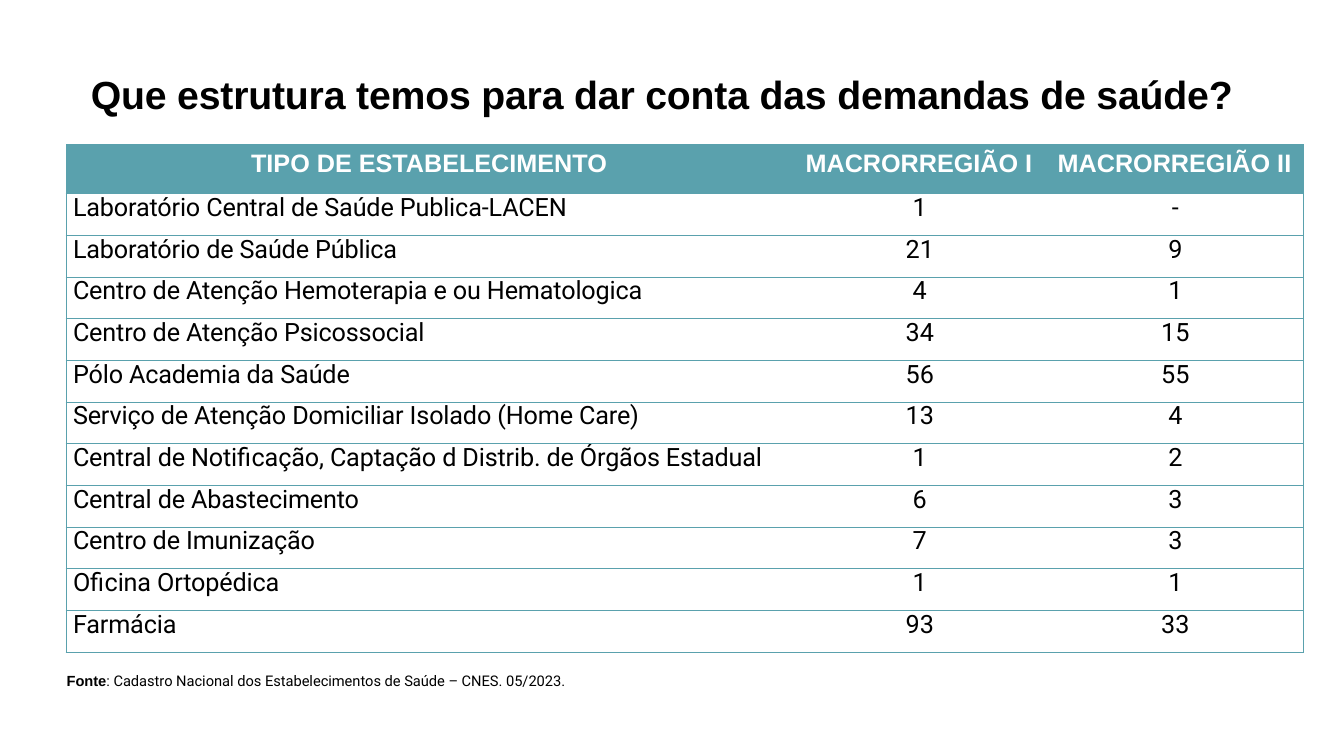
from lxml import etree
from pptx import Presentation
from pptx.dml.color import RGBColor
from pptx.enum.text import PP_ALIGN
from pptx.oxml.ns import qn
from pptx.util import Cm, Pt

LEFT, CENTER = PP_ALIGN.LEFT, PP_ALIGN.CENTER
COLORS = {"teal": "5AA1AD", "black": "000000", "white": "FFFFFF"}
COLUMN_WIDTHS = (18.31, 6.38, 6.5)
HEADER_HEIGHT, ROW_HEIGHT = 1.25, 1.05
HEADERS = ("TIPO DE ESTABELECIMENTO", "MACRORREGIÃO I", "MACRORREGIÃO II")
ESTABLISHMENTS = (
    ("Laboratório Central de Saúde Publica-LACEN", "1", "-"),
    ("Laboratório de Saúde Pública", "21", "9"),
    ("Centro de Atenção Hemoterapia e ou Hematologica", "4", "1"),
    ("Centro de Atenção Psicossocial", "34", "15"),
    ("Pólo Academia da Saúde", "56", "55"),
    ("Serviço de Atenção Domiciliar Isolado (Home Care)", "13", "4"),
    ("Central de Notificação, Captação d Distrib. de Órgãos Estadual", "1", "2"),
    ("Central de Abastecimento", "6", "3"),
    ("Centro de Imunização", "7", "3"),
    ("Oficina Ortopédica", "1", "1"),
    ("Farmácia", "93", "33"),
)


def style_font(font, name, size, color, bold=False):
    """Set the typeface, size, colour and weight of a font."""
    font.name, font.size, font.bold = name, Pt(size), bold
    font.color.rgb = RGBColor.from_string(COLORS[color])


def tighten(run):
    """Draw the letters of a run slightly closer together."""
    run._r.get_or_add_rPr().set("spc", "-10")


def add_text(slide, left, top, width, height, space_before):
    """Add a text box without side margins and return its paragraph."""
    frame = slide.shapes.add_textbox(Cm(left), Cm(top), Cm(width), Cm(height)).text_frame
    frame.word_wrap = True
    frame.margin_left = frame.margin_right = frame.margin_bottom = 0
    frame.margin_top = Cm(0.03)
    paragraph = frame.paragraphs[0]
    paragraph.space_before = Pt(space_before)
    return paragraph


def set_borders(cell, visible_sides):
    """Draw thin teal lines on the visible sides and none on the others."""
    properties = cell._tc.get_or_add_tcPr()
    for side in "LRTB":
        line = etree.SubElement(properties, qn(f"a:ln{side}"), w=str(Pt(0.5)))
        if side in visible_sides:
            fill = etree.SubElement(line, qn("a:solidFill"))
            etree.SubElement(fill, qn("a:srgbClr"), val=COLORS["teal"])
        else:
            etree.SubElement(line, qn("a:noFill"))


def fill_cell(cell, text, align, margin_left=0, margin_top=0):
    """Write text into a cell and return its paragraph."""
    cell.margin_left, cell.margin_top = Cm(margin_left), Cm(margin_top)
    cell.margin_right = cell.margin_bottom = 0
    paragraph = cell.text_frame.paragraphs[0]
    paragraph.text = text
    paragraph.alignment = align
    return paragraph


def fill_header(cell, text):
    """Write a column heading on teal."""
    paragraph = fill_cell(cell, text, CENTER, margin_top=0.13)
    paragraph.space_before = Pt(3.4)
    style_font(paragraph.font, "Arial", 18, "white", bold=True)
    set_borders(cell, "")
    cell.fill.solid()
    cell.fill.fore_color.rgb = RGBColor.from_string(COLORS["teal"])


def fill_body(cell, text, column):
    """Write a name or a count in a ruled body cell."""
    is_name = column == 0
    paragraph = fill_cell(cell, text, LEFT if is_name else CENTER, 0.18 if is_name else 0.04)
    paragraph.line_spacing = Pt(20.7)
    style_font(paragraph.font, "Roboto", 18, "black")
    if is_name:
        tighten(paragraph.runs[0])
    set_borders(cell, ("LTB", "TB", "RTB")[column])
    cell.fill.background()


def add_establishment_table(slide):
    """Add the table of establishments by macro-region."""
    height = HEADER_HEIGHT + ROW_HEIGHT * len(ESTABLISHMENTS)
    table = slide.shapes.add_table(
        len(ESTABLISHMENTS) + 1, len(HEADERS),
        Cm(1.66), Cm(3.63), Cm(sum(COLUMN_WIDTHS)), Cm(height),
    ).table
    table.horz_banding = False
    for column, width in enumerate(COLUMN_WIDTHS):
        table.columns[column].width = Cm(width)
        fill_header(table.cell(0, column), HEADERS[column])
    table.rows[0].height = Cm(HEADER_HEIGHT)
    for row, values in enumerate(ESTABLISHMENTS, start=1):
        table.rows[row].height = Cm(ROW_HEIGHT)
        for column, value in enumerate(values):
            fill_body(table.cell(row, column), value, column)


def main():
    """Build and save the slide."""
    presentation = Presentation()
    presentation.slide_width, presentation.slide_height = Cm(33.87), Cm(19.05)
    slide = presentation.slides.add_slide(presentation.slide_layouts[6])

    title = add_text(slide, 2.29, 1.75, 29.4, 1.25, 0.9)
    title.text = "Que estrutura temos para dar conta das demandas de saúde?"
    style_font(title.font, "Arial", 28, "black", bold=True)
    tighten(title.runs[0])

    add_establishment_table(slide)

    source = add_text(slide, 1.68, 16.89, 12.85, 0.5, 1.1)
    for text, name, bold in (
        ("Fonte", "Arial", True),
        (": Cadastro Nacional dos Estabelecimentos de Saúde – CNES. 05/2023.", "Roboto", False),
    ):
        run = source.add_run()
        run.text = text
        style_font(run.font, name, 10.5, "black", bold)

    presentation.save("out.pptx")


if __name__ == "__main__":
    main()
